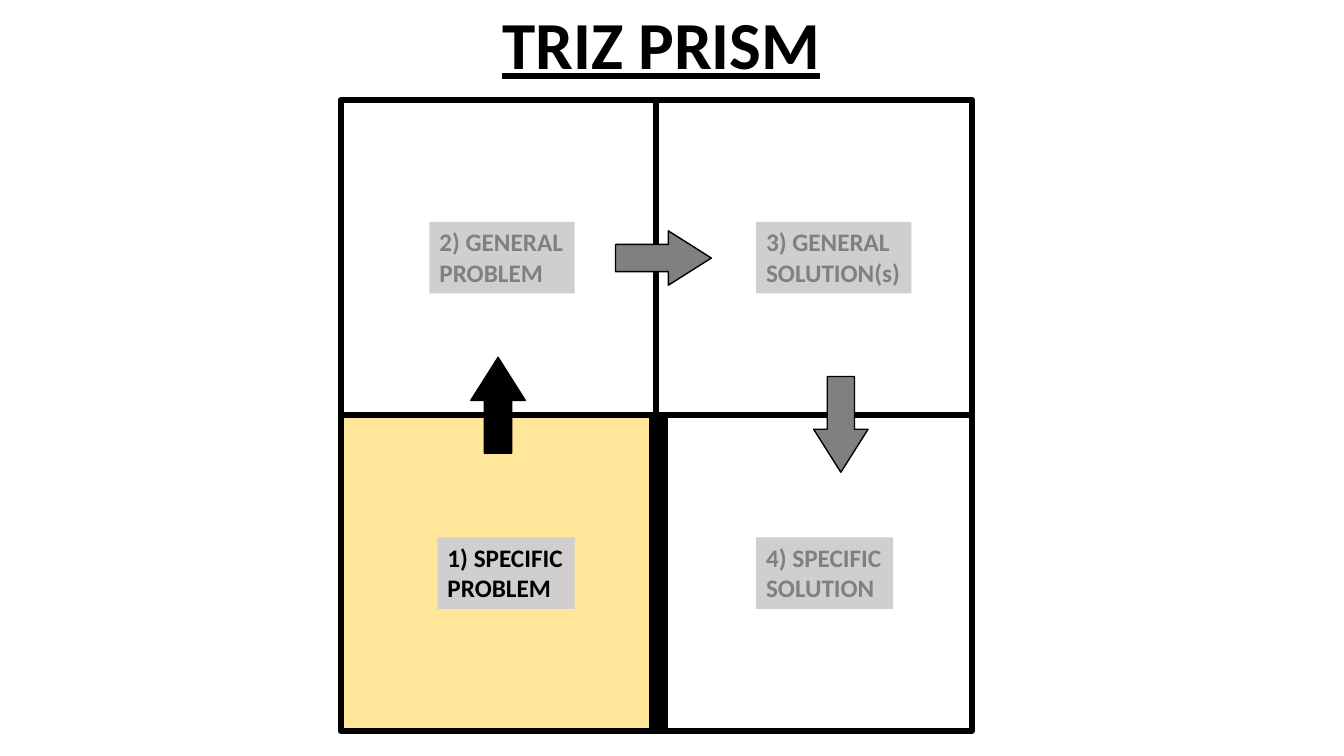
import pptx
import pptx.util
import pptx.dml.color
import pptx.enum.shapes
import pptx.enum.text
import pptx.oxml

Inches = pptx.util.Inches
Pt = pptx.util.Pt
RGBColor = pptx.dml.color.RGBColor
SHAPE = pptx.enum.shapes.MSO_SHAPE
ALIGN = pptx.enum.text.PP_ALIGN

BLACK = RGBColor(0x00, 0x00, 0x00)
GRAY = RGBColor(0x80, 0x80, 0x80)
LABEL_FILL = RGBColor(0xD0, 0xCE, 0xCE)
HIGHLIGHT = RGBColor(0xFF, 0xE6, 0x99)

# Content
TITLE = "TRIZ PRISM"
# column, row, lines, label width, text colour, cell fill
STEPS = [
    (0, 1, ["1) SPECIFIC", "PROBLEM"], 1.36, BLACK, HIGHLIGHT),
    (0, 0, ["2) GENERAL", "PROBLEM"], 1.44, GRAY, None),
    (1, 0, ["3) GENERAL", "SOLUTION(s)"], 1.54, GRAY, None),
    (1, 1, ["4) SPECIFIC", "SOLUTION"], 1.36, GRAY, None),
]
# centre x, centre y, rotation, fill
ARROWS = [(4.94, 4.02, 270, BLACK), (8.34, 4.21, 90, GRAY), (6.58, 2.56, 0, GRAY)]
BARRIER_X = [6.48, 6.58]

# Grid geometry in inches
GRID_LEFT, GRID_TOP, CELL = 3.38, 0.99, 3.13
LABEL_TOP, LABEL_HEIGHT = 1.21, 0.71
LABEL_EDGES = (5.7, 7.5)  # right edge of left column, left edge of right column
ARROW_WIDTH, ARROW_HEIGHT = 0.95, 0.54


def set_text(shape, lines, size=18, color=BLACK, underline=None, align=ALIGN.LEFT):
    frame = shape.text_frame
    frame.word_wrap = False
    frame.auto_size = pptx.enum.text.MSO_AUTO_SIZE.SHAPE_TO_FIT_TEXT
    frame.vertical_anchor = pptx.enum.text.MSO_ANCHOR.TOP
    frame.text = "\n".join(lines)
    for paragraph in frame.paragraphs:
        paragraph.alignment = align
        font = paragraph.runs[0].font
        font.name, font.size, font.bold = "Calibri", Pt(size), True
        font.underline = underline
        font.color.rgb = color


def add_block(shapes, kind, box, fill=None, line_width=None):
    shape = shapes.add_shape(kind, *map(Inches, box))
    shape.shadow.inherit = False
    if fill is None:
        shape.fill.background()
    else:
        shape.fill.solid()
        shape.fill.fore_color.rgb = fill
    if line_width is None:
        shape.line.fill.background()
    else:
        shape.line.color.rgb = BLACK
        shape.line.width = Pt(line_width)
    return shape


presentation = pptx.Presentation()
presentation.slide_width, presentation.slide_height = Inches(13.33), Inches(7.5)
slide = presentation.slides.add_slide(presentation.slide_layouts[5])

# Title
title = slide.shapes.title
title.left, title.top, title.width, title.height = map(Inches, (4.88, -0.03, 3.39, 0.91))
set_text(title, [TITLE], size=48, underline=True)

# Four cells
grid = slide.shapes.add_group_shape()
for column, row, lines, width, color, fill in STEPS:
    box = (GRID_LEFT + column * CELL, GRID_TOP + row * CELL, CELL, CELL)
    add_block(grid.shapes, SHAPE.RECTANGLE, box, fill, 4.5)

# Double barrier between problem and solution
for x in BARRIER_X:
    barrier = slide.shapes.add_connector(
        pptx.enum.shapes.MSO_CONNECTOR.STRAIGHT,
        Inches(x), Inches(GRID_TOP + CELL), Inches(x), Inches(GRID_TOP + 2 * CELL))
    barrier.line.color.rgb = BLACK
    barrier.line.width = Pt(6)
    properties = barrier._element.spPr
    properties.append(properties.makeelement(pptx.oxml.ns.qn("a:effectLst"), {}))

# Step labels
for column, row, lines, width, color, fill in STEPS:
    left = LABEL_EDGES[column] - (width if column == 0 else 0)
    box = (left, GRID_TOP + row * CELL + LABEL_TOP, width, LABEL_HEIGHT)
    set_text(add_block(slide.shapes, SHAPE.RECTANGLE, box, LABEL_FILL), lines, color=color)

# Arrows from step to step
for center_x, center_y, rotation, fill in ARROWS:
    box = (center_x - ARROW_WIDTH / 2, center_y - ARROW_HEIGHT / 2, ARROW_WIDTH, ARROW_HEIGHT)
    arrow = add_block(slide.shapes, SHAPE.RIGHT_ARROW, box, fill, 1)
    arrow.adjustments[1] = 0.79
    arrow.rotation = rotation

presentation.save("out.pptx")
